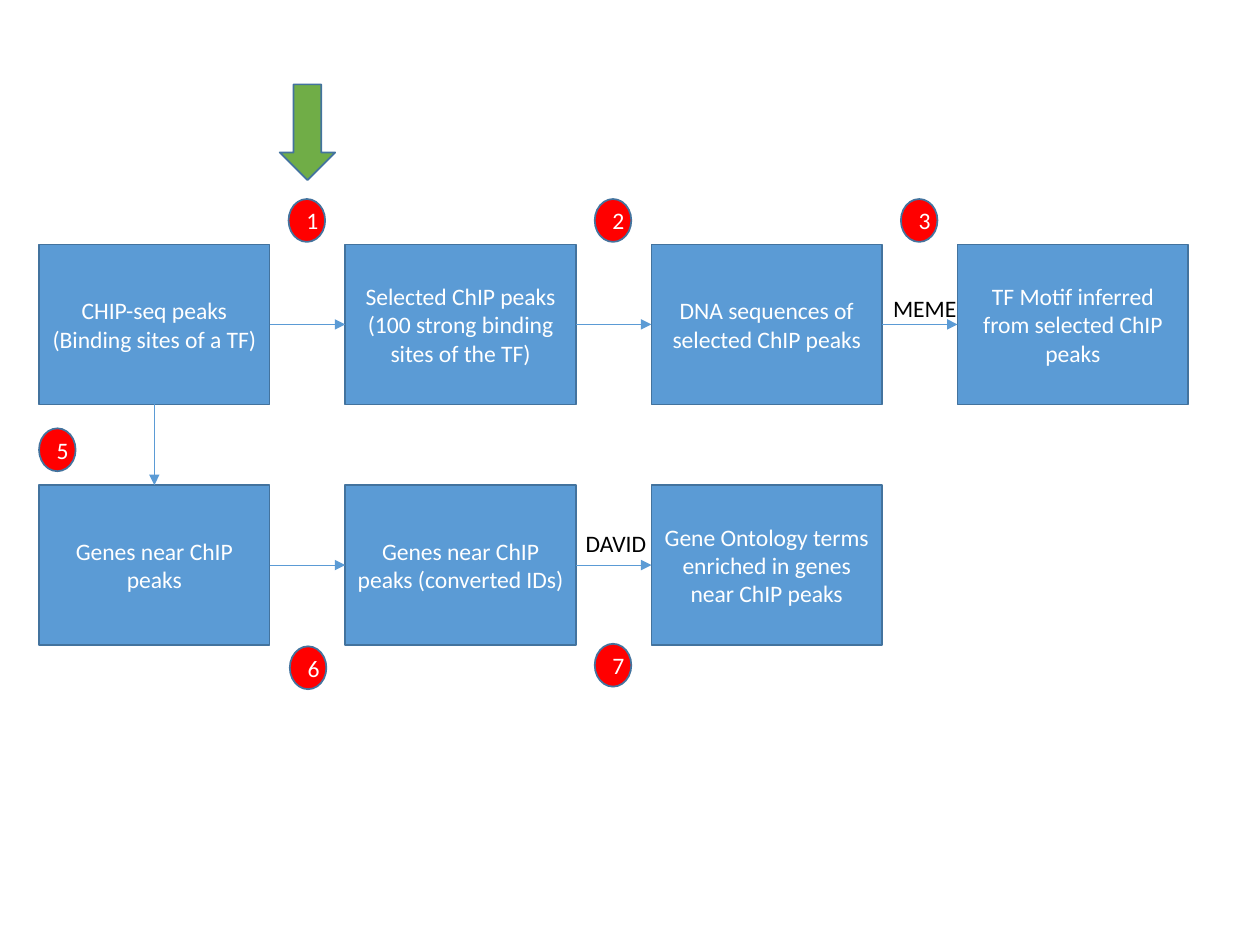
"""Build a slide showing the steps of a ChIP-seq analysis workflow."""
from dataclasses import dataclass

from lxml.etree import SubElement
from pptx import Presentation
from pptx.dml.color import RGBColor
from pptx.enum.shapes import MSO_CONNECTOR, MSO_SHAPE
from pptx.enum.text import MSO_ANCHOR, MSO_AUTO_SIZE, PP_ALIGN
from pptx.oxml.ns import qn
from pptx.shapes.autoshape import Shape
from pptx.slide import Slide
from pptx.text.text import TextFrame
from pptx.util import Inches, Pt

COLORS = {
    "step": "5B9BD5",
    "outline": "43739E",
    "badge": "FF0000",
    "pointer": "70AD47",
    "light": "FFFFFF",
    "dark": "000000",
}
LEFT, COLUMN_PITCH = 0.31, 2.43
ROW_TOPS = (1.94, 3.85)
STEP_WIDTH, STEP_HEIGHT = 1.83, 1.27
BADGE_WIDTH, BADGE_HEIGHT = 0.29, 0.34
TOP_SIDE, LEFT_SIDE, BOTTOM_SIDE, RIGHT_SIDE = range(4)


@dataclass
class Label:
    text: str
    left: float
    top: float
    width: float


@dataclass
class Badge:
    number: int
    left: float
    top: float


STEP_ROWS = (
    (
        "CHIP-seq peaks (Binding sites of a TF)",
        "Selected ChIP peaks (100 strong binding sites of the TF)",
        "DNA sequences of selected ChIP peaks",
        "TF Motif inferred from selected ChIP peaks",
    ),
    (
        "Genes near ChIP peaks",
        "Genes near ChIP peaks (converted IDs)",
        "Gene Ontology terms enriched in genes near ChIP peaks",
    ),
)
LABELS = (Label("MEME", 6.99, 2.28, 0.71), Label("DAVID", 4.55, 4.15, 0.68))
BADGES = (
    Badge(1, 2.29, 1.58),
    Badge(2, 4.72, 1.58),
    Badge(3, 7.15, 1.58),
    Badge(5, LEFT, 3.4),
    Badge(6, 2.3, 5.13),
    Badge(7, 4.72, 5.11),
)


def color(name: str) -> RGBColor:
    return RGBColor.from_string(COLORS[name])


def write(frame: TextFrame, text: str, color_name: str) -> None:
    frame.text = text
    font = frame.paragraphs[0].font
    font.name, font.size = "Calibri", Pt(13.5)
    font.color.rgb = color(color_name)


def add_figure(page: Slide, kind: MSO_SHAPE, fill: str, left: float, top: float,
               width: float, height: float, text: str = "") -> Shape:
    figure = page.shapes.add_shape(
        kind, Inches(left), Inches(top), Inches(width), Inches(height))
    figure.shadow.inherit = False
    figure.fill.solid()
    figure.fill.fore_color.rgb = color(fill)
    figure.line.color.rgb = color("outline")
    figure.line.width = Pt(1)
    if text:
        frame = figure.text_frame
        frame.word_wrap = True
        frame.vertical_anchor = MSO_ANCHOR.MIDDLE
        write(frame, text, "light")
        frame.paragraphs[0].alignment = PP_ALIGN.CENTER
    return figure


def add_step(page: Slide, text: str, column: int, top: float) -> Shape:
    step = add_figure(page, MSO_SHAPE.RECTANGLE, "step",
                      LEFT + column * COLUMN_PITCH, top, STEP_WIDTH, STEP_HEIGHT, text)
    step.text_frame.margin_left = step.text_frame.margin_right = Inches(0.09)
    return step


def add_arrow(page: Slide, start: Shape, start_side: int, end: Shape, end_side: int) -> None:
    arrow = page.shapes.add_connector(MSO_CONNECTOR.STRAIGHT, 0, 0, 0, 0)
    arrow.begin_connect(start, start_side)
    arrow.end_connect(end, end_side)
    arrow.line.color.rgb = color("step")
    arrow.line.width = Pt(0.5)
    SubElement(arrow.line._get_or_add_ln(), qn("a:tailEnd"), type="triangle")
    SubElement(arrow._element.spPr, qn("a:effectLst"))


def add_label(page: Slide, label: Label) -> None:
    box = page.shapes.add_textbox(
        Inches(label.left), Inches(label.top), Inches(label.width), Inches(0.33))
    box.text_frame.word_wrap = False
    box.text_frame.auto_size = MSO_AUTO_SIZE.SHAPE_TO_FIT_TEXT
    write(box.text_frame, label.text, "dark")


def main() -> None:
    deck = Presentation()
    deck.slide_width, deck.slide_height = Inches(10), Inches(7.5)
    page = deck.slides.add_slide(deck.slide_layouts[6])

    rows = [[add_step(page, text, column, top) for column, text in enumerate(texts)]
            for texts, top in zip(STEP_ROWS, ROW_TOPS)]
    for row in rows:
        for start, end in zip(row, row[1:]):
            add_arrow(page, start, RIGHT_SIDE, end, LEFT_SIDE)
    add_arrow(page, rows[0][0], BOTTOM_SIDE, rows[1][0], TOP_SIDE)

    for label in LABELS:
        add_label(page, label)
    for badge in BADGES:
        add_figure(page, MSO_SHAPE.OVAL, "badge", badge.left, badge.top,
                   BADGE_WIDTH, BADGE_HEIGHT, str(badge.number))
    add_figure(page, MSO_SHAPE.DOWN_ARROW, "pointer", 2.22, 0.67, 0.44, 0.76)
    deck.save("out.pptx")


if __name__ == "__main__":
    main()
